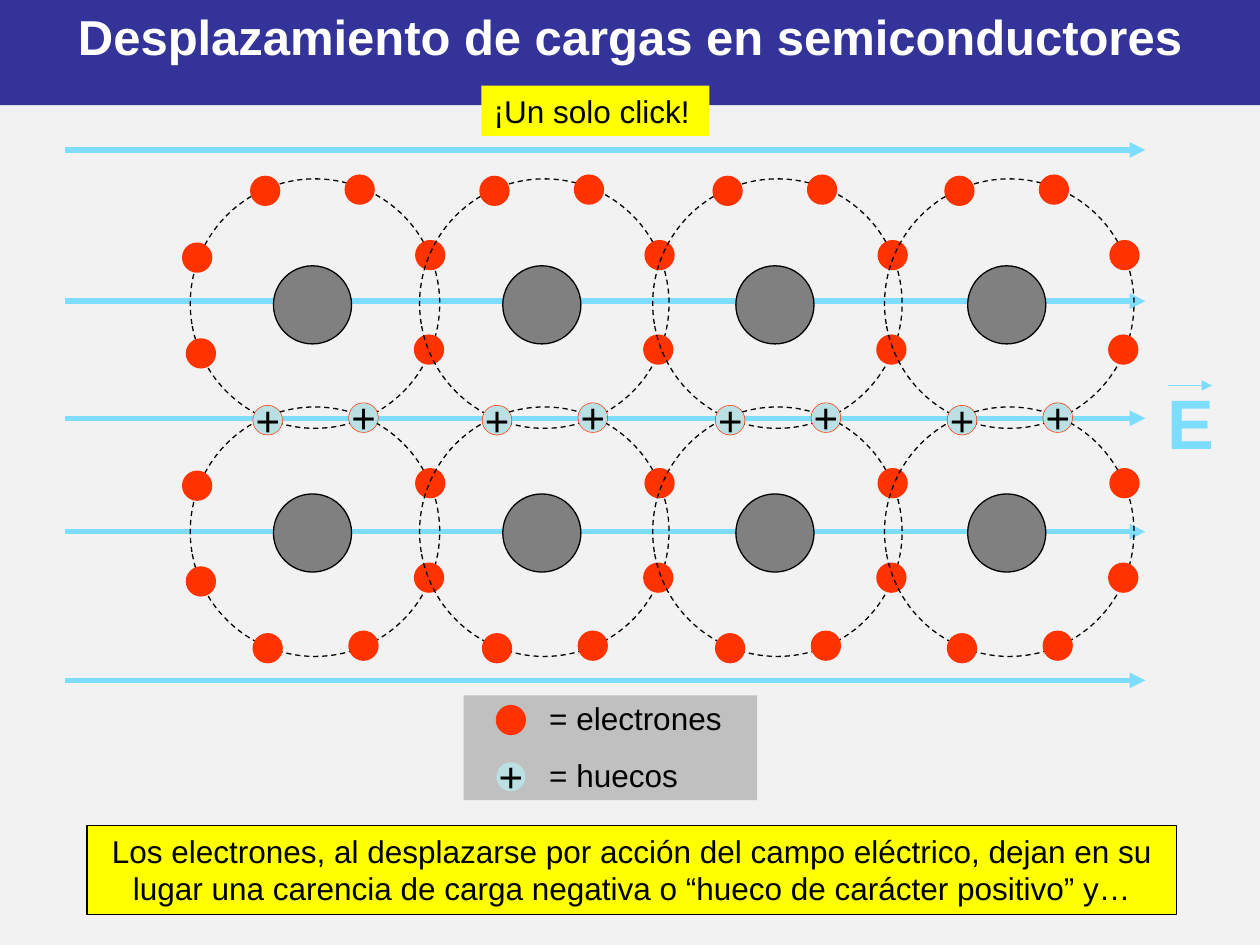
from itertools import product

from lxml import etree
from pptx import Presentation
from pptx import util as u
from pptx.dml.color import RGBColor
from pptx.enum import dml, shapes, text
from pptx.oxml.ns import qn

GRID_COLUMNS, GRID_ROWS = 10, 7.5
CELL = u.Inches(1)
ATOM_COLUMNS = (1.51, 3.33, 5.18, 7.02)
ATOM_ROWS = (1.42, 3.23)
ORBIT, NUCLEUS, CHARGE = 1.98, 0.62, 0.23
NUCLEUS_OFFSET = (0.66, 0.69)
TOP = ((1.23, -0.03), (0.48, -0.02))
LEFT = ((-0.06, 0.51), (-0.03, 1.27))
RIGHT = ((1.78, 1.24), (1.79, 0.49))
BOTTOM = ((0.5, 1.8), (1.26, 1.78))
FIELD_ROWS = (3.32, 2.39, 1.19, 4.22, 5.4)
FIELD, ELECTRON, HOLE, YELLOW = "7DDDFF", "FF3300", "BBE0E3", "FFFF00"


def color(value):
    return RGBColor.from_string(value)


def cells(*counts):
    return [u.Emu(round(count * CELL)) for count in counts]


def paint(part, fill=None, line=None):
    part.shadow.inherit = False
    if fill:
        part.fill.solid()
        part.fill.fore_color.rgb = color(fill)
    else:
        part.fill.background()
    if line:
        part.line.color.rgb = color(line)
        part.line.width = u.Pt(0.75)
    else:
        part.line.fill.background()


def write(part, words, size=18, ink="000000", bold=False, align=text.PP_ALIGN.LEFT):
    frame = part.text_frame
    frame.word_wrap = True
    frame.auto_size = text.MSO_AUTO_SIZE.SHAPE_TO_FIT_TEXT
    frame.vertical_anchor = text.MSO_ANCHOR.TOP
    paragraph = frame.paragraphs[0]
    paragraph.alignment = align
    run = paragraph.add_run()
    run.text = words
    run.font.name = "Arial"
    run.font.size = u.Pt(size)
    run.font.bold = bold
    run.font.color.rgb = color(ink)


def add_label(parent, box, words, **style):
    write(parent.add_textbox(*cells(*box)), words, **style)


def add_panel(parent, box, fill, line=None):
    panel = parent.add_shape(shapes.MSO_SHAPE.RECTANGLE, *cells(*box))
    paint(panel, fill, line)
    return panel


def add_circle(parent, left, top, size, fill=None, line=None, turn=0):
    circle = parent.add_shape(shapes.MSO_SHAPE.OVAL, *cells(left, top, size, size))
    circle.rotation = turn
    paint(circle, fill, line)
    return circle


def add_arrow(parent, start, end, row, width):
    arrow = parent.add_connector(shapes.MSO_CONNECTOR.STRAIGHT, *cells(start, row, end, row))
    arrow.line.color.rgb = color(FIELD)
    arrow.line.width = u.Pt(width)
    etree.SubElement(arrow.line._get_or_add_ln(), qn("a:tailEnd"), type="triangle")
    etree.SubElement(arrow._element.spPr, qn("a:effectLst"))


def add_electron(parent, left, top):
    add_circle(parent, left, top, CHARGE, ELECTRON, ELECTRON)


def add_hole(parent, left, top):
    add_circle(parent, left, top, CHARGE, HOLE)
    add_label(parent, (left - 0.08, top - 0.14, 0.45, 0.5), "+", size=24)


def add_atom(parent, left, top, electrons):
    across, down = NUCLEUS_OFFSET
    add_circle(parent, left + across, top + down, NUCLEUS, "808080", "000000")
    orbit = add_circle(parent, left, top, ORBIT, line="000000", turn=350.6)
    orbit.line.dash_style = dml.MSO_LINE.DASH
    for across, down in electrons:
        add_electron(parent, left + across, top + down)


def add_crystal(parent):
    for top, left in product(ATOM_ROWS, ATOM_COLUMNS):
        electrons = RIGHT + BOTTOM
        if top == ATOM_ROWS[0]:
            electrons += TOP
        if left == ATOM_COLUMNS[0]:
            electrons += LEFT
        add_atom(parent, left, top, electrons)
    for left, (across, down) in product(ATOM_COLUMNS, BOTTOM):
        add_hole(parent.add_group_shape().shapes, left + across, ATOM_ROWS[0] + down)


def add_field(parent):
    symbol = parent.add_group_shape().shapes
    add_label(symbol, (9.17, 2.96, 0.83, 0.77), "E", size=40, ink=FIELD, bold=True)
    add_arrow(symbol, 9.27, 9.62, 3.06, 0.75)
    for row in FIELD_ROWS:
        add_arrow(parent, 0.52, 9.09, row, 3)


def add_legend(parent):
    legend = parent.add_group_shape().shapes
    add_panel(legend, (3.68, 5.52, 2.33, 0.83), "C0C0C0")
    entries = ((add_electron, "= electrones"), (add_hole, "= huecos"))
    for index, (add_charge, meaning) in enumerate(entries):
        top = 5.5 + 0.45 * index
        add_charge(legend, 3.94, top + 0.1)
        add_label(legend, (4.26, top, 1.91, 0.4), meaning)


def add_title(slide, words):
    title = slide.shapes.title
    title.left, title.top, title.width, title.height = cells(0, 0, GRID_COLUMNS, 0.57)
    title.fill.solid()
    title.fill.fore_color.rgb = color("333399")
    write(title, words, size=28, ink="FFFFFF", bold=True, align=text.PP_ALIGN.CENTER)


def main():
    deck = Presentation()
    deck.slide_width, deck.slide_height = cells(GRID_COLUMNS, GRID_ROWS)
    slide = deck.slides.add_slide(deck.slide_layouts[5])
    slide.background.fill.solid()
    slide.background.fill.fore_color.rgb = color("F2F2F2")

    add_field(slide.shapes)
    add_crystal(slide.shapes)
    add_legend(slide.shapes)
    add_title(slide, "Desplazamiento de cargas en semiconductores")
    write(add_panel(slide.shapes, (3.82, 0.68, 1.81, 0.4), YELLOW), "¡Un solo click!")
    explanation = add_panel(slide.shapes, (0.69, 6.55, 8.65, 0.71), YELLOW, "000000")
    write(
        explanation,
        "Los electrones, al desplazarse por acción del campo eléctrico, dejan en su "
        "lugar una carencia de carga negativa o “hueco de carácter positivo” y…",
        align=text.PP_ALIGN.CENTER,
    )
    deck.save("out.pptx")


if __name__ == "__main__":
    main()
